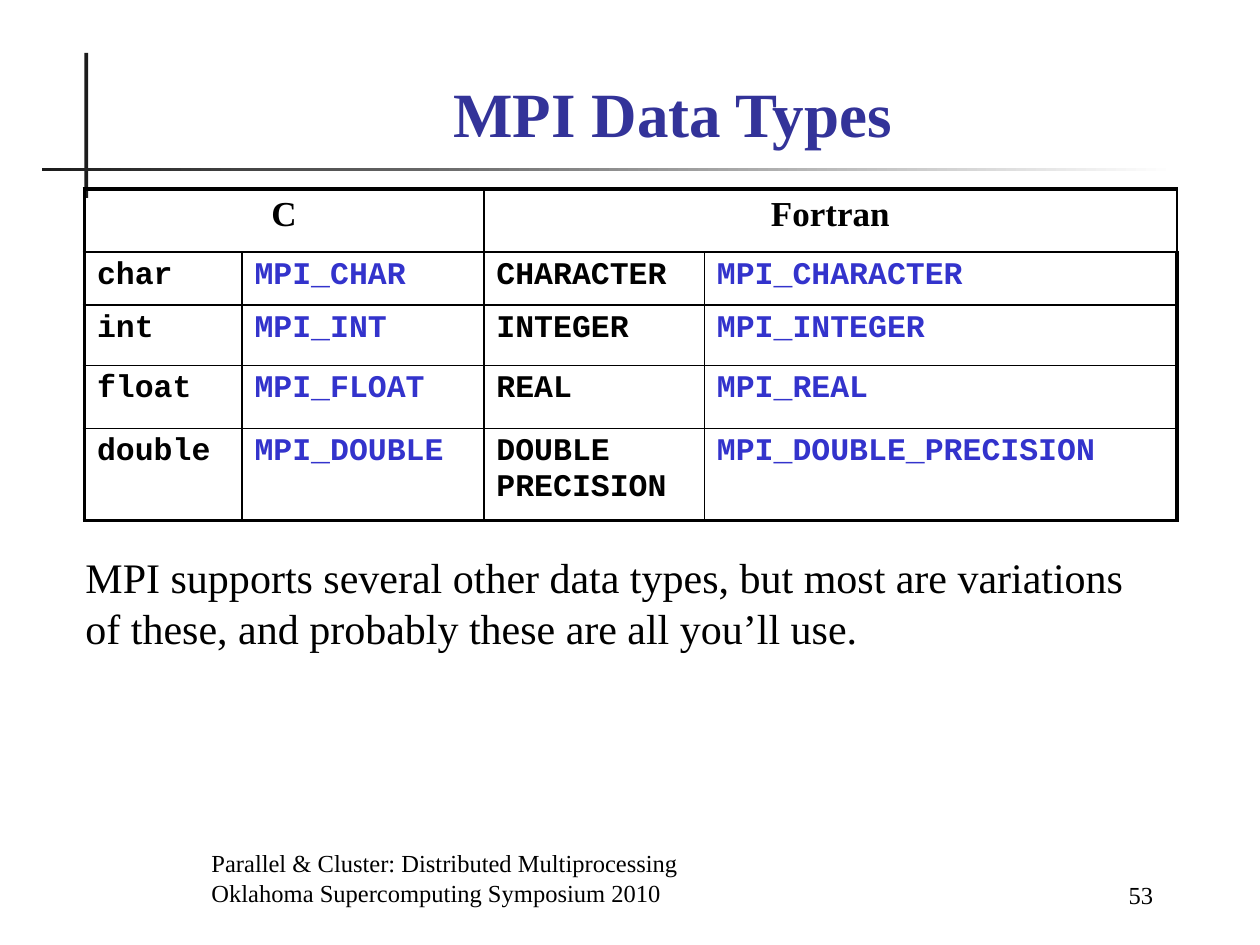
from lxml.etree import SubElement
from pptx import Presentation
from pptx.dml.color import RGBColor
from pptx.enum.shapes import MSO_SHAPE
from pptx.enum.text import MSO_ANCHOR, MSO_AUTO_SIZE, PP_ALIGN
from pptx.oxml.ns import qn
from pptx.util import Inches, Pt

BLACK = RGBColor(0x00, 0x00, 0x00)
WHITE = RGBColor(0xFF, 0xFF, 0xFF)
DARK = RGBColor(0x1C, 0x1C, 0x1C)
NAVY = RGBColor(0x33, 0x33, 0x99)
BLUE = RGBColor(0x33, 0x33, 0xCC)
SERIF, MONO = "Times New Roman", "Courier New"

TITLE = "MPI Data Types"
HEADS = ["C", "Fortran"]
TYPES = [
    ("char", "MPI_CHAR", "CHARACTER", "MPI_CHARACTER"),
    ("int", "MPI_INT", "INTEGER", "MPI_INTEGER"),
    ("float", "MPI_FLOAT", "REAL", "MPI_REAL"),
    ("double", "MPI_DOUBLE", "DOUBLE PRECISION", "MPI_DOUBLE_PRECISION"),
]
NOTE = ("MPI supports several other data types, but most are variations "
        "of these, and probably these are all you’ll use.")
FOOTER = ["Parallel & Cluster: Distributed Multiprocessing",
          "Oklahoma Supercomputing Symposium 2010"]
PAGE = "53"
WIDTHS = [1.25, 1.92, 1.75, 3.75]
HEIGHTS = [0.5, 0.42, 0.48, 0.5, 0.73]
THIN, THICK = 1, 2.25


def write(frame, *lines, size=14, font=SERIF, color=BLACK, bold=False,
          align=PP_ALIGN.LEFT, anchor=MSO_ANCHOR.TOP):
    frame.word_wrap = True
    frame.vertical_anchor = anchor
    for i, line in enumerate(lines):
        para = frame.paragraphs[0] if i == 0 else frame.add_paragraph()
        para.alignment = align
        run = para.add_run()
        run.text = line
        run.font.size = Pt(size)
        run.font.name = font
        run.font.bold = bold
        run.font.color.rgb = color


def add_text(slide, box, *lines, **style):
    shape = slide.shapes.add_textbox(*map(Inches, box))
    write(shape.text_frame, *lines, **style)
    return shape


def add_bar(slide, *box):
    bar = slide.shapes.add_shape(MSO_SHAPE.RECTANGLE, *map(Inches, box))
    bar.shadow.inherit = False
    bar.line.fill.background()
    return bar.fill


def set_edges(cell, row, col):
    last_row, last_col = len(HEIGHTS) - 1, len(WIDTHS) - 1
    outer = {"L": col == 0, "R": col == last_col,
             "T": row == 0, "B": row == last_row}
    props = cell._tc.get_or_add_tcPr()
    for side, thick in outer.items():
        width = Pt(THICK if thick else THIN)
        line = SubElement(props, qn("a:ln" + side), w=str(width))
        fill = SubElement(line, qn("a:solidFill"))
        SubElement(fill, qn("a:srgbClr"), val=str(BLACK))
    cell.fill.background()


def add_grid(slide):
    box = (0.67, 1.5, sum(WIDTHS), sum(HEIGHTS))
    table = slide.shapes.add_table(
        len(HEIGHTS), len(WIDTHS), *map(Inches, box)).table
    table.first_row = table.horz_banding = False
    for col, width in zip(table.columns, WIDTHS):
        col.width = Inches(width)
    for row, height in zip(table.rows, HEIGHTS):
        row.height = Inches(height)
    for r in range(len(HEIGHTS)):
        for c in range(len(WIDTHS)):
            set_edges(table.cell(r, c), r, c)
    for i, head in enumerate(HEADS):
        cell = table.cell(0, 2 * i)
        cell.merge(table.cell(0, 2 * i + 1))
        write(cell.text_frame, head, size=20, bold=True,
              align=PP_ALIGN.CENTER)
    for r, names in enumerate(TYPES, 1):
        for c, name in enumerate(names):
            write(table.cell(r, c).text_frame, name, size=18, font=MONO,
                  bold=True, color=BLUE if c % 2 else BLACK)


def main():
    deck = Presentation()
    deck.slide_width, deck.slide_height = Inches(10), Inches(7.5)
    slide = deck.slides.add_slide(deck.slide_layouts[5])

    post = add_bar(slide, 0.67, 0.42, 0.03, 1.15)
    post.solid()
    post.fore_color.rgb = DARK
    rule = add_bar(slide, 0.33, 1.33, 9, 0.03)
    rule.gradient()
    rule.gradient_angle = 0
    for stop, color, place in zip(rule.gradient_stops, (DARK, WHITE), (0, 1)):
        stop.color.rgb = color
        stop.position = place

    title = slide.shapes.title
    title.left, title.top, title.width, title.height = map(
        Inches, (1.08, 0.5, 8.52, 0.74))
    title.text_frame.auto_size = MSO_AUTO_SIZE.NONE
    write(title.text_frame, TITLE, size=36, color=NAVY, bold=True,
          align=PP_ALIGN.CENTER, anchor=MSO_ANCHOR.BOTTOM)

    add_grid(slide)
    note = add_text(slide, (0.58, 4.33, 8.75, 0.9), NOTE, size=24)
    note.text_frame.auto_size = MSO_AUTO_SIZE.SHAPE_TO_FIT_TEXT
    add_text(slide, (1.58, 6.75, 6.08, 0.5), *FOOTER,
             anchor=MSO_ANCHOR.BOTTOM)
    add_text(slide, (7.83, 6.77, 1.42, 0.5), PAGE,
             align=PP_ALIGN.RIGHT, anchor=MSO_ANCHOR.BOTTOM)
    deck.save("out.pptx")


if __name__ == "__main__":
    main()
